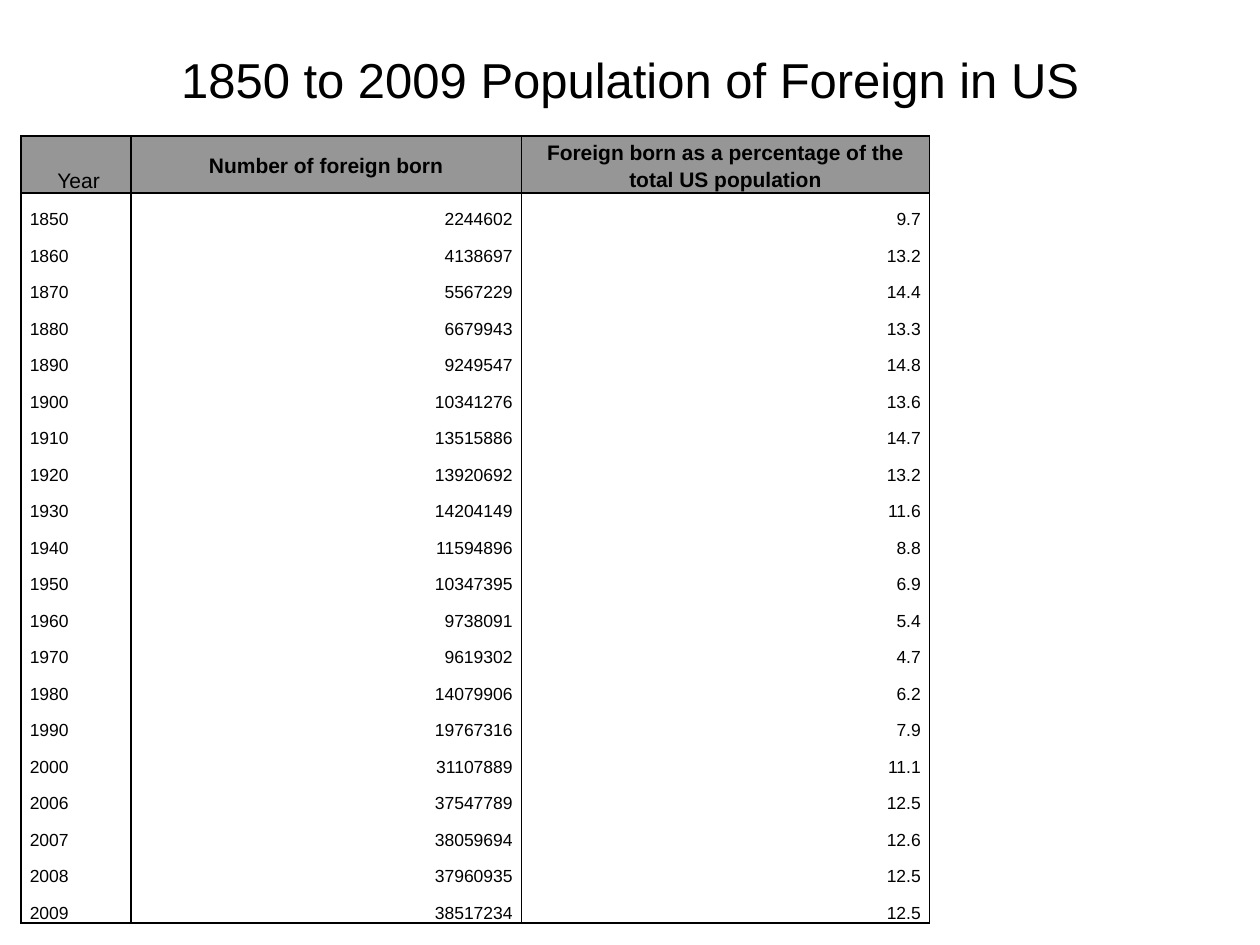
from lxml import etree
from pptx import Presentation
from pptx.dml.color import RGBColor
from pptx.enum.text import MSO_ANCHOR, PP_ALIGN
from pptx.oxml.ns import qn
from pptx.util import Cm, Pt

LEFT, MID, RIGHT = PP_ALIGN.LEFT, PP_ALIGN.CENTER, PP_ALIGN.RIGHT
CENTER, BOTTOM = MSO_ANCHOR.MIDDLE, MSO_ANCHOR.BOTTOM

TITLE = "1850 to 2009 Population of Foreign in US"
HEADS = (
    " Year",
    "Number of foreign born",
    "Foreign born as a percentage of the total US population",
)
DATA = [
    (1850, 2244602, 9.7),
    (1860, 4138697, 13.2),
    (1870, 5567229, 14.4),
    (1880, 6679943, 13.3),
    (1890, 9249547, 14.8),
    (1900, 10341276, 13.6),
    (1910, 13515886, 14.7),
    (1920, 13920692, 13.2),
    (1930, 14204149, 11.6),
    (1940, 11594896, 8.8),
    (1950, 10347395, 6.9),
    (1960, 9738091, 5.4),
    (1970, 9619302, 4.7),
    (1980, 14079906, 6.2),
    (1990, 19767316, 7.9),
    (2000, 31107889, 11.1),
    (2006, 37547789, 12.5),
    (2007, 38059694, 12.6),
    (2008, 37960935, 12.5),
    (2009, 38517234, 12.5),
]
THEME = {
    "font": "Arial", "ink": "000000", "head": "969696", "body": "FFFFFF",
    "title": 28, "label": 12, "value": 10, "line": 1,
}
WIDTHS = (2.22, 7.87, 8.23, 2.21, 2.21, 2.21)
X, Y, HIGH, TOP = 0.42, 2.74, 15.88, 1.15
PAD = 0.18


def write(frame, text, size, align=LEFT, bold=False, space=None):
    para = frame.paragraphs[0]
    para.alignment = align
    para.line_spacing = space
    run = para.add_run()
    run.text = text
    font = run.font
    font.name, font.size, font.bold = THEME["font"], Pt(size), bold
    font.color.rgb = RGBColor.from_string(THEME["ink"])


def edge(cell, sides):
    props = cell._tc.get_or_add_tcPr()
    for side in "LRTB":
        line = etree.SubElement(props, qn(f"a:ln{side}"), w=str(Pt(THEME["line"])))
        if side in sides:
            fill = etree.SubElement(line, qn("a:solidFill"))
            etree.SubElement(fill, qn("a:srgbClr"), val=THEME["ink"])
        else:
            etree.SubElement(line, qn("a:noFill"))


def sides_at(row, col):
    if col >= len(HEADS):
        return "L" if col == len(HEADS) else ""
    sides = "LR"
    if row <= 1:
        sides += "T"
    if row in (0, len(DATA)):
        sides += "B"
    return sides


def fill_cell(cell, row, col):
    cell.margin_left = cell.margin_right = Cm(PAD)
    cell.margin_top = cell.margin_bottom = 0
    edge(cell, sides_at(row, col))
    used = col < len(HEADS)
    head = row == 0 and used
    cell.fill.solid()
    cell.fill.fore_color.rgb = RGBColor.from_string(THEME["head" if head else "body"])
    cell.vertical_anchor = CENTER if head and col else BOTTOM
    if head:
        write(cell.text_frame, HEADS[col], THEME["label"], align=MID, bold=col > 0, space=1.15)
    elif used:
        write(cell.text_frame, str(DATA[row - 1][col]), THEME["value"],
              align=RIGHT if col else LEFT, space=1.15)
    else:
        para = cell.text_frame.paragraphs[0]._p
        etree.SubElement(para, qn("a:endParaRPr"), sz=str(THEME["value"] * 100))


def main():
    deck = Presentation()
    deck.slide_width, deck.slide_height = Cm(25.4), Cm(19.05)
    slide = deck.slides.add_slide(deck.slide_layouts[5])

    title = slide.shapes.title
    title.left, title.top, title.width, title.height = Cm(1.27), 0, Cm(22.86), Cm(3.18)
    title.text_frame.vertical_anchor = CENTER
    write(title.text_frame, TITLE, THEME["title"], align=MID)

    count = len(DATA) + 1
    table = slide.shapes.add_table(
        count, len(WIDTHS), Cm(X), Cm(Y), Cm(sum(WIDTHS)), Cm(HIGH)).table
    table.first_row = table.horz_banding = False
    for col, width in enumerate(WIDTHS):
        table.columns[col].width = Cm(width)
    for row in range(count):
        table.rows[row].height = Cm((HIGH - TOP) / len(DATA) if row else TOP)
        for col in range(len(WIDTHS)):
            fill_cell(table.cell(row, col), row, col)

    deck.save("out.pptx")


if __name__ == "__main__":
    main()
